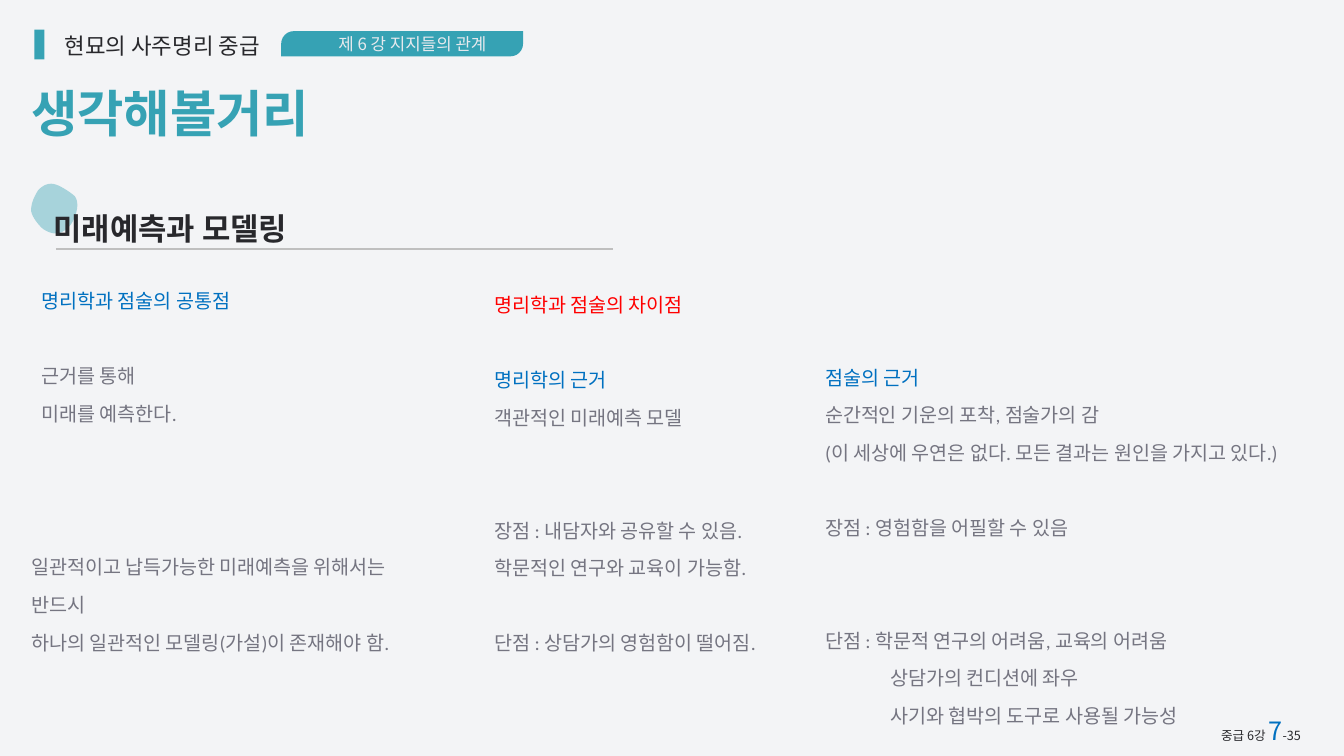
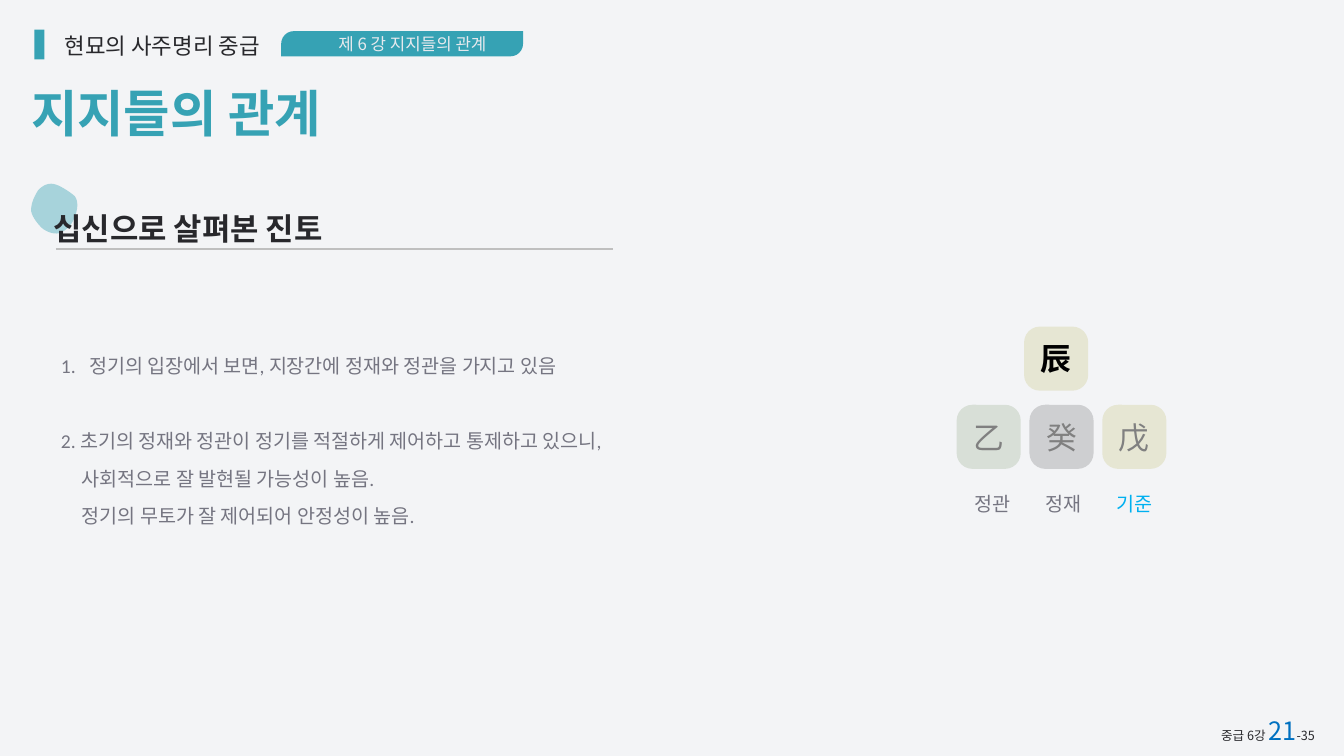
from dataclasses import dataclass

from lxml import etree
from pptx import Presentation
from pptx.dml.color import RGBColor
from pptx.enum.shapes import MSO_CONNECTOR, MSO_SHAPE
from pptx.enum.text import MSO_ANCHOR, MSO_AUTO_SIZE, PP_ALIGN
from pptx.oxml.ns import qn
from pptx.util import Cm, Pt

RECTANGLE = MSO_SHAPE.RECTANGLE
ROUNDED = MSO_SHAPE.ROUNDED_RECTANGLE
RIBBON = MSO_SHAPE.ROUND_2_DIAG_RECTANGLE
STRAIGHT = MSO_CONNECTOR.STRAIGHT
LEFT, CENTER, JUSTIFY = PP_ALIGN.LEFT, PP_ALIGN.CENTER, PP_ALIGN.JUSTIFY
MIDDLE = MSO_ANCHOR.MIDDLE
GROW = MSO_AUTO_SIZE.SHAPE_TO_FIT_TEXT

TEAL, MIST, INK, GREY = "36A2B4", "E8EAEE", "28282C", "757581"
BLUE, SKY, RED, RULE = "0070C0", "00B0F0", "FF0000", "BFBFBF"
EARTH, WOOD, WATER = "E6E6D3", "D8DFD7", "CECFD1"
STEM, BLACK = "808080", "000000"
HEADING_FONT, BODY_FONT = "Noto Sans CJK KR", "Calibri"

WIDTH, HEIGHT = 67.73, 38.1
BODY_SIZE, BODY_SPACING = 28, 1.6
BODY_LINE = 53.7  # height of one body line in points
TOTAL = 35

# Pebble behind the subtitle: start point, then cubic curves (two controls, end)
PEBBLE_START = (1.57, 10.64)
PEBBLE_CURVES = [
    ((1.55, 10.34), (1.68, 9.96), (1.93, 9.58)),
    ((2.13, 9.37), (2.39, 9.22), (2.69, 9.27)),
    ((3.0, 9.32), (3.53, 9.68), (3.76, 9.88)),
    ((3.96, 10.11), (3.94, 10.59), (3.71, 11.07)),
    ((3.56, 11.43), (3.23, 11.68), (2.95, 11.76)),
    ((2.69, 11.81), (2.31, 11.68), (2.08, 11.46)),
    ((1.88, 11.25), (1.63, 10.95), PEBBLE_START),
]


def rgb(value):
    return RGBColor.from_string(value)


def curve_points(start, curves, steps=8):
    """Points along a chain of cubic curves."""
    points = []
    for first, second, end in curves:
        for step in range(1, steps + 1):
            t = step / steps
            u = 1 - t
            weights = (u ** 3, 3 * u * u * t, 3 * u * t * t, t ** 3)
            corners = (start, first, second, end)
            points.append(tuple(
                Cm(sum(w * corner[axis] for w, corner in zip(weights, corners)))
                for axis in (0, 1)))
        start = end
    return points


@dataclass
class Line:
    """One body paragraph; gap counts the free lines above it."""
    text: str
    color: str = GREY
    gap: int = 0
    indent: float = 0
    numbered: bool = False


class Deck:
    def __init__(self):
        self.presentation = Presentation()
        self.presentation.slide_width = Cm(WIDTH)
        self.presentation.slide_height = Cm(HEIGHT)
        self.slide = None

    # Basic elements
    def paint(self, shape, color, alpha=None):
        shape.shadow.inherit = False
        shape.fill.solid()
        shape.fill.fore_color.rgb = rgb(color)
        shape.line.fill.background()
        if alpha is not None:
            tone = shape._element.spPr.find(qn("a:solidFill")).find(qn("a:srgbClr"))
            etree.SubElement(tone, qn("a:alpha"), val=str(alpha * 1000))

    def shape(self, kind, left, top, width, height, color, alpha=None, adjust=()):
        shape = self.slide.shapes.add_shape(
            kind, Cm(left), Cm(top), Cm(width), Cm(height))
        for index, value in enumerate(adjust):
            shape.adjustments[index] = value
        self.paint(shape, color, alpha)
        return shape

    def pebble(self):
        builder = self.slide.shapes.build_freeform(
            *(Cm(value) for value in PEBBLE_START), scale=1.0)
        builder.add_line_segments(curve_points(PEBBLE_START, PEBBLE_CURVES))
        self.paint(builder.convert_to_shape(), TEAL, 40)

    def rule(self, left, right, top):
        line = self.slide.shapes.add_connector(
            STRAIGHT, Cm(left), Cm(top), Cm(right), Cm(top))
        line.line.color.rgb = rgb(RULE)
        line.line.width = Pt(3)
        etree.SubElement(line._element.spPr, qn("a:effectLst"))

    def box(self, left, top, width, height):
        box = self.slide.shapes.add_textbox(
            Cm(left), Cm(top), Cm(width), Cm(height))
        box.text_frame.word_wrap = True
        box.text_frame.auto_size = GROW
        return box.text_frame

    def run(self, paragraph, text, size, color, font=HEADING_FONT, bold=False):
        run = paragraph.add_run()
        run.text = text
        run.font.size = Pt(size)
        run.font.bold = bold
        run.font.name = font
        run.font.color.rgb = rgb(color)
        etree.SubElement(run._r.get_or_add_rPr(), qn("a:ea"), typeface=font)

    def label(self, frame, text, size, color, align=LEFT, bold=False):
        paragraph = frame.paragraphs[0]
        paragraph.alignment = align
        self.run(paragraph, text, size, color, bold=bold)

    def body(self, left, top, width, height, lines):
        frame = self.box(left, top, width, height)
        for index, line in enumerate(lines):
            paragraph = frame.add_paragraph() if index else frame.paragraphs[0]
            paragraph.alignment = JUSTIFY
            paragraph.line_spacing = BODY_SPACING
            if line.gap:
                paragraph.space_before = Pt(line.gap * BODY_LINE)
            properties = paragraph._p.get_or_add_pPr()
            if line.indent:
                properties.set("marL", str(Cm(line.indent)))
            if line.numbered:
                properties.set("indent", str(-Cm(line.indent)))
                etree.SubElement(properties, qn("a:buFont"), typeface="+mj-lt")
                etree.SubElement(properties, qn("a:buAutoNum"), type="arabicPeriod")
            self.run(paragraph, line.text, BODY_SIZE, line.color, BODY_FONT)

    def tile(self, left, top, character, fill, color=STEM, bold=False):
        tile = self.shape(ROUNDED, left, top, 3.23, 3.23, fill, adjust=[0.246])
        tile.text_frame.vertical_anchor = MIDDLE
        self.label(tile.text_frame, character, 44, color, CENTER, bold)

    # Shared frame of every slide
    def page(self, number, title, subtitle):
        self.slide = self.presentation.slides.add_slide(
            self.presentation.slide_layouts[6])
        self.shape(RECTANGLE, 0, 0, WIDTH, HEIGHT, MIST, 50)

        # Footer
        footer = self.box(61.29, 35.92, 6.44, 1.8).paragraphs[0]
        self.run(footer, "중급 6강 ", 18, INK)
        self.run(footer, str(number), 36, BLUE)
        self.run(footer, f"-{TOTAL}", 18, INK)

        # Course name and lecture ribbon
        self.label(self.box(2.39, 1.47, 11.58, 1.63),
                   "현묘의 사주명리 중급", 32, INK, CENTER)
        self.shape(RECTANGLE, 1.73, 1.5, 0.51, 1.5, TEAL)
        ribbon = self.shape(RIBBON, 14.17, 1.57, 12.19, 1.27, TEAL, adjust=[0.5, 0])
        frame = ribbon.text_frame
        frame.vertical_anchor = MIDDLE
        frame.margin_left, frame.margin_right = Cm(1.29), Cm(0.25)
        frame.margin_top = frame.margin_bottom = 0
        self.label(frame, "제 6 강 지지들의 관계", 24, MIST, CENTER)

        # Title and subtitle
        self.rule(2.82, 30.89, 12.57)
        self.label(self.box(1.32, 3.99, 16.8, 3.33), title, 72, TEAL, bold=True)
        self.pebble()
        self.label(self.box(2.44, 10.44, 28.45, 2.13), subtitle, 44, INK, bold=True)


def forecasting_slide(deck):
    deck.page(7, "생각해볼거리", "미래예측과 모델링")
    deck.body(1.32, 27.15, 20.73, 5.77, [
        Line("일관적이고 납득가능한 미래예측을 위해서는"),
        Line("반드시"),
        Line("하나의 일관적인 모델링(가설)이 존재해야 함."),
    ])
    deck.body(1.85, 13.72, 10.9, 7.7, [
        Line("명리학과 점술의 공통점", BLUE),
        Line("근거를 통해", gap=1),
        Line("미래를 예측한다."),
    ])
    deck.body(24.66, 13.92, 14.99, 19.18, [
        Line("명리학과 점술의 차이점", RED),
        Line("명리학의 근거", BLUE, gap=1),
        Line("객관적인 미래예측 모델"),
        Line("장점 : 내담자와 공유할 수 있음.", gap=2),
        Line("학문적인 연구와 교육이 가능함."),
        Line("단점 : 상담가의 영험함이 떨어짐.", gap=1),
    ])
    deck.body(41.33, 17.58, 25.76, 19.2, [
        Line("점술의 근거", BLUE),
        Line("순간적인 기운의 포착, 점술가의 감"),
        Line("(이 세상에 우연은 없다. 모든 결과는 원인을 가지고 있다.)"),
        Line("장점 : 영험함을 어필할 수 있음", gap=1),
        Line("단점 : 학문적 연구의 어려움, 교육의 어려움", gap=2),
        Line("상담가의 컨디션에 좌우", indent=3.28),
        Line("사기와 협박의 도구로 사용될 가능성", indent=3.28),
    ])


def earth_branch_slide(deck):
    deck.page(21, "지지들의 관계", "십신으로 살펴본 진토")
    deck.body(2.82, 16.99, 31.62, 9.6, [
        Line("정기의 입장에서 보면, 지장간에 정재와 정관을 가지고 있음",
             indent=1.42, numbered=True),
        Line("2. 초기의 정재와 정관이 정기를 적절하게 제어하고 통제하고 있으니,", gap=1),
        Line("사회적으로 잘 발현될 가능성이 높음.", indent=1.06),
        Line("정기의 무토가 잘 제어되어 안정성이 높음.", indent=1.06),
    ])

    # Branch above its three hidden stems
    deck.tile(51.61, 16.46, "辰", EARTH, BLACK, True)
    stems = [("乙", WOOD, "정관", GREY), ("癸", WATER, "정재", GREY),
             ("戊", EARTH, "기준", SKY)]
    for index, (stem, fill, role, color) in enumerate(stems):
        deck.tile(48.21 + index * 3.67, 20.4, stem, fill)
        deck.body(48.87 + index * 3.57, 23.98, 2.69, 1.96, [Line(role, color)])


def main():
    deck = Deck()
    forecasting_slide(deck)
    earth_branch_slide(deck)
    deck.presentation.save("out.pptx")


if __name__ == "__main__":
    main()
